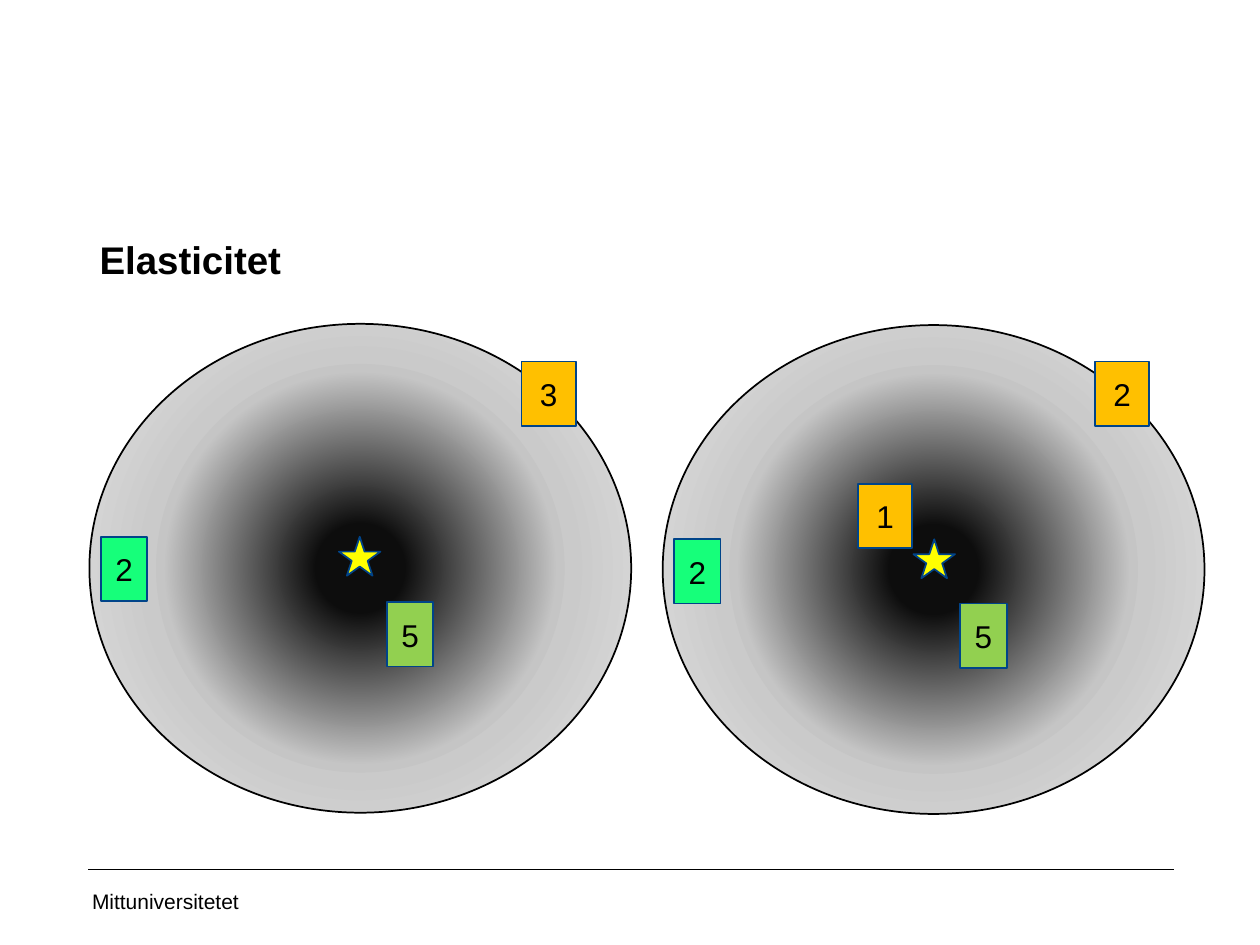
from pptx import Presentation
from pptx.dml.color import RGBColor
from pptx.enum.shapes import MSO_CONNECTOR, MSO_SHAPE
from pptx.enum.text import MSO_ANCHOR, PP_ALIGN
from pptx.oxml import parse_xml
from pptx.oxml.ns import nsdecls
from pptx.util import Inches, Pt

ELLIPSE, STAR, TILE = MSO_SHAPE.OVAL, MSO_SHAPE.STAR_5_POINT, MSO_SHAPE.RECTANGLE
STRAIGHT = MSO_CONNECTOR.STRAIGHT
TOP, MIDDLE = MSO_ANCHOR.TOP, MSO_ANCHOR.MIDDLE
LEFT, CENTER = PP_ALIGN.LEFT, PP_ALIGN.CENTER
BLACK, BLUE, YELLOW = "000000", "004489", "FFFF00"
ORANGE, GREEN, MINT = "FFC000", "92D050", "16FF7A"
GLOW_STOPS = [(12, "0D0D0D"), (54, "C5C5C5"), (58, "CACACA"), (100, "E7E6E6")]


def color(hex_value):
    return RGBColor.from_string(hex_value)


def write(owner, text, size, align, anchor, bold=False):
    frame = owner.text_frame
    frame.text = text
    frame.word_wrap = True
    frame.vertical_anchor = anchor
    paragraph = frame.paragraphs[0]
    paragraph.alignment = align
    font_format = {"name": "Arial", "size": Pt(size), "bold": bold}
    for attribute, value in font_format.items():
        setattr(paragraph.font, attribute, value)
    paragraph.font.color.rgb = color(BLACK)
    return paragraph


prs = Presentation()
prs.slide_width, prs.slide_height = Inches(10), Inches(7.5)
slide = prs.slides.add_slide(prs.slide_layouts[5])
shapes = slide.shapes

# Footer with rule
footer = shapes.add_textbox(Inches(0.69), Inches(6.95), Inches(2.25), Inches(0.4))
write(footer, "Mittuniversitetet", 12, LEFT, MIDDLE)
footer.text_frame.margin_left = Inches(0.04)
rule = shapes.add_connector(STRAIGHT, Inches(0.7), Inches(6.9), Inches(9.32), Inches(6.9))
rule.line.color.rgb = color(BLACK)
rule.line.width = Pt(0.25)
rule._element.spPr.append(parse_xml(f"<a:effectLst {nsdecls('a')}/>"))

# Title
title = shapes.title
title.left, title.top = Inches(0.69), Inches(1.69)
title.width, title.height = Inches(8.65), Inches(0.71)
write(title, "Elasticitet", 22, LEFT, TOP, bold=True).line_spacing = Pt(36)

# Two fields: ellipse position, star position, numbered tiles
fields = [
    ((0.71, 2.57), (2.69, 4.26), [
        ("3", 4.14, 2.87, 0.43, ORANGE),
        ("5", 3.07, 4.78, 0.37, GREEN),
        ("2", 0.8, 4.26, 0.37, MINT),
    ]),
    ((5.26, 2.58), (7.25, 4.28), [
        ("2", 8.69, 2.87, 0.43, ORANGE),
        ("5", 7.62, 4.79, 0.37, GREEN),
        ("2", 5.35, 4.28, 0.37, MINT),
        ("1", 6.81, 3.84, 0.43, ORANGE),
    ]),
]
stops = "".join(
    f'<a:gs pos="{position * 1000}"><a:srgbClr val="{tone}"/></a:gs>'
    for position, tone in GLOW_STOPS
)
glow_xml = (
    f'<a:gradFill {nsdecls("a")} rotWithShape="1"><a:gsLst>{stops}</a:gsLst>'
    '<a:path path="circle"><a:fillToRect l="50000" t="50000" r="50000" b="50000"/>'
    "</a:path></a:gradFill>"
)

for (field_x, field_y), (star_x, star_y), tiles in fields:
    parts = [
        (ELLIPSE, "", field_x, field_y, 4.3, 3.88, None, BLACK),
        (STAR, "", star_x, star_y, 0.33, 0.31, YELLOW, BLUE),
    ]
    parts += [(TILE, number, x, y, width, 0.51, fill, BLUE)
              for number, x, y, width, fill in tiles]
    for kind, number, x, y, width, height, fill, outline in parts:
        part = shapes.add_shape(kind, Inches(x), Inches(y), Inches(width), Inches(height))
        part.shadow.inherit = False
        part.line.color.rgb = color(outline)
        part.line.width = Pt(1)
        if fill:
            part.fill.solid()
            part.fill.fore_color.rgb = color(fill)
        else:
            # Radial gradient goes right after the geometry
            part._element.spPr.prstGeom.addnext(parse_xml(glow_xml))
        if number:
            write(part, number, 18, CENTER, MIDDLE)

prs.save("out.pptx")
